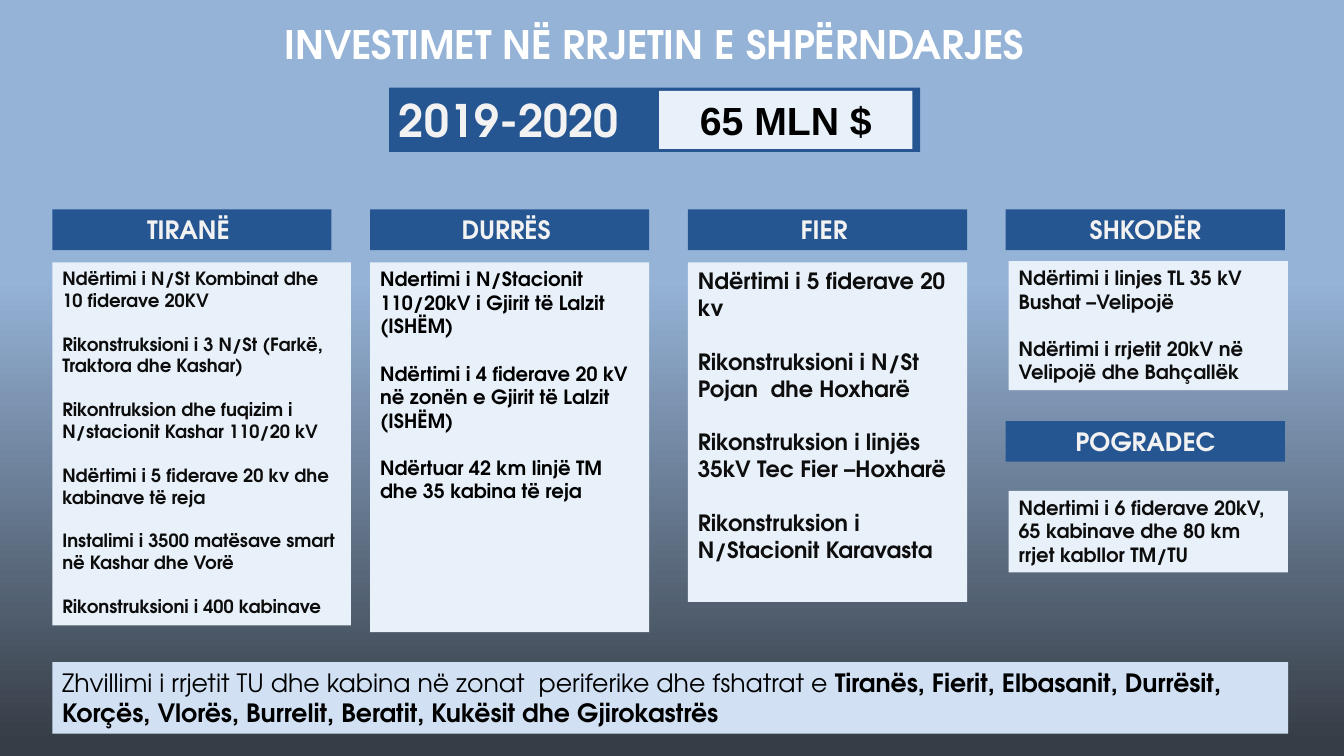
from lxml import etree
from pptx import Presentation
from pptx.dml import color
from pptx.enum import shapes, text
from pptx.oxml import ns
from pptx.util import Pt

ADVENTOR = "TeX Gyre Adventor"
NAVY, PALE, OFF_WHITE, INK = "255692", "E8F0F9", "F2F2F2", "0D0D0D"
CENTER = text.PP_ALIGN.CENTER


def rgb(value):
    return color.RGBColor.from_string(value)


def add_box(place, fill, paragraphs, size, ink, font=ADVENTOR, align=text.PP_ALIGN.LEFT):
    box = slide.shapes.add_shape(shapes.MSO_SHAPE.RECTANGLE, *[Pt(n) for n in place])
    box.shadow.inherit = False
    box.fill.solid()
    box.fill.fore_color.rgb = rgb(fill)
    box.line.fill.background()
    frame = box.text_frame
    frame.word_wrap = True
    frame.vertical_anchor = text.MSO_ANCHOR.TOP
    for index, runs in enumerate(paragraphs):
        paragraph = frame.paragraphs[0] if index == 0 else frame.add_paragraph()
        paragraph.alignment = align
        if index:
            paragraph.space_before = Pt(size * 1.2)
        for words, bold in runs:
            run = paragraph.add_run()
            run.text = words
            run.font.name = font
            run.font.size = Pt(size)
            run.font.bold = bold
            run.font.color.rgb = rgb(ink)


deck = Presentation()
deck.slide_width, deck.slide_height = Pt(960), Pt(540)
slide = deck.slides.add_slide(deck.slide_layouts[5])

sky = slide.background.fill
sky.gradient()
sky.gradient_angle = 270
for stop, (position, shade) in zip(sky.gradient_stops, [(0.37, "95B3D7"), (0.98, "363D46")]):
    stop.position = position
    stop.color.rgb = rgb(shade)

title = slide.shapes.title
title.left, title.top, title.width, title.height = Pt(76.3), Pt(-22.3), Pt(782), Pt(74.2)
title.text_frame.word_wrap = True
title.text_frame.auto_size = text.MSO_AUTO_SIZE.NONE
title.text_frame.vertical_anchor = text.MSO_ANCHOR.BOTTOM
heading = title.text_frame.paragraphs[0]
heading.alignment = CENTER
headline = heading.add_run()
headline.text = "INVESTIMET NË RRJETIN E SHPËRNDARJES"
headline.font.name = ADVENTOR
headline.font.size = Pt(28)
headline.font.bold = True
headline.font.color.rgb = rgb("FFFFFF")
glow = etree.fromstring(
    f'<a:effectLst {ns.nsdecls("a")}><a:outerShdw blurRad="38100" dist="25400" dir="2700000">'
    '<a:srgbClr val="000000"><a:alpha val="43000"/></a:srgbClr></a:outerShdw></a:effectLst>')
headline.font._element.find(ns.qn("a:solidFill")).addnext(glow)

add_box((277.9, 62.6, 379.4, 46), NAVY, [[("2019-2020", True)]], 32, OFF_WHITE)
add_box((470.9, 64.9, 180.9, 41.4), PALE, [[("65 MLN $", True)]], 28, "000000", "Arial", CENTER)

column_lefts = [37.4 + 227 * column for column in range(4)]
regions = [
    ("TIRANË ", column_lefts[0], 149.6, (37.4, 187.4, 213.2, 259.3), 13, INK, [
        "Ndërtimi i N/St Kombinat dhe 10 fiderave 20KV",
        "Rikonstruksioni i 3 N/St (Farkë, Traktora dhe Kashar)",
        "Rikontruksion dhe fuqizim i N/stacionit Kashar 110/20 kV",
        "Ndërtimi i 5 fiderave 20 kv dhe kabinave të reja",
        "Instalimi i 3500 matësave smart në Kashar dhe Vorë",
        "Rikonstruksioni i 400 kabinave"]),
    ("DURRËS ", column_lefts[1], 149.6, (264.4, 187.4, 199.4, 264.2), 14, "000000", [
        "Ndertimi i N/Stacionit 110/20kV i Gjirit të Lalzit (ISHËM)",
        "Ndërtimi i 4 fiderave 20 kV në zonën e Gjirit të Lalzit (ISHËM)",
        "Ndërtuar 42 km linjë TM dhe 35 kabina të reja"]),
    ("FIER ", column_lefts[2], 149.6, (491.4, 187.4, 199.4, 242.6), 16, INK, [
        "Ndërtimi i 5 fiderave 20 kv",
        "Rikonstruksioni i N/St Pojan  dhe Hoxharë",
        "Rikonstruksion i linjës 35kV Tec Fier –Hoxharë",
        "Rikonstruksion i N/Stacionit Karavasta"]),
    ("SHKODËR", column_lefts[3], 149.6, (720.5, 186.5, 199.4, 92.2), 14, INK, [
        "Ndërtimi i linjes TL 35 kV Bushat –Velipojë",
        "Ndërtimi i rrjetit 20kV në Velipojë dhe Bahçallëk"]),
    ("POGRADEC", column_lefts[3], 300.8, (720.5, 350.6, 199.4, 58.3), 14, INK, [
        "Ndertimi i 6 fiderave 20kV, 65 kabinave dhe 80 km rrjet kabllor TM/TU"]),
]
for region, left, top, works_place, size, ink, works in regions:
    add_box(works_place, PALE, [[(work, True)] for work in works], size, ink)
    add_box((left, top, 199.4, 29), NAVY, [[(region, True)]], 18, OFF_WHITE, align=CENTER)

add_box((37.4, 473, 882.7, 51), "D1E1F3", [[
    ("Zhvillimi i rrjetit TU dhe kabina në zonat  periferike dhe fshatrat e ", False),
    ("Tiranës, Fierit, Elbasanit, Durrësit, Korçës, Vlorës, Burrelit, Beratit, "
     "Kukësit dhe Gjirokastrës", True)]], 18, "000000")

deck.save("out.pptx")
